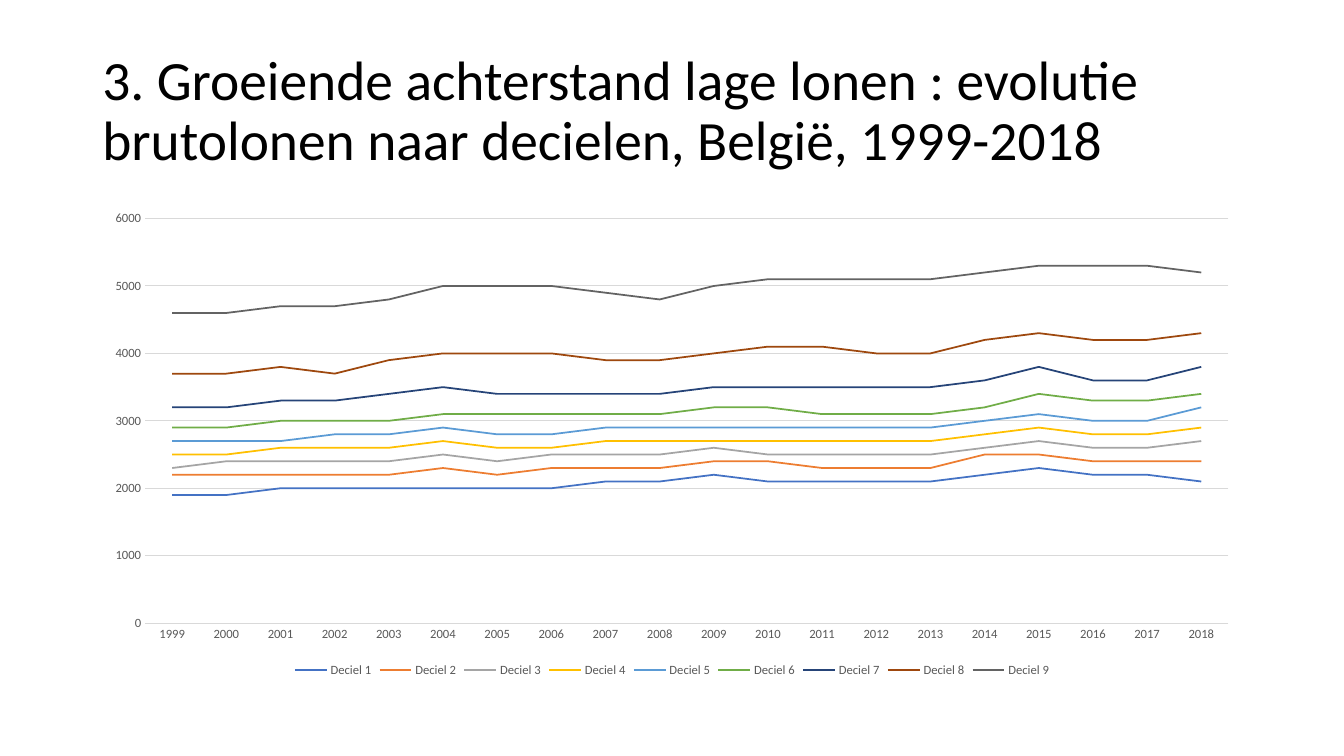
from pptx import Presentation
from pptx.chart.data import CategoryChartData
from pptx.dml.color import RGBColor
from pptx.enum.chart import XL_CHART_TYPE, XL_LEGEND_POSITION, XL_TICK_MARK
from pptx.enum.text import MSO_ANCHOR
from pptx.util import Pt

PX = 9525
FACE = "Calibri"
BLACK = RGBColor(0x00, 0x00, 0x00)
GREY = RGBColor(0x59, 0x59, 0x59)
RULE = RGBColor(0xD9, 0xD9, 0xD9)
BLUE = RGBColor(0x44, 0x72, 0xC4)
ORANGE = RGBColor(0xED, 0x7D, 0x31)
SILVER = RGBColor(0xA5, 0xA5, 0xA5)
GOLD = RGBColor(0xFF, 0xC0, 0x00)
SKY = RGBColor(0x5B, 0x9B, 0xD5)
GREEN = RGBColor(0x70, 0xAD, 0x47)
NAVY = RGBColor(0x26, 0x44, 0x78)
BROWN = RGBColor(0x9E, 0x48, 0x0E)
SLATE = RGBColor(0x63, 0x63, 0x63)

TITLE = ("3. Groeiende achterstand lage lonen : evolutie brutolonen "
         "naar decielen, België, 1999-2018")
YEARS = range(1999, 2019)
# Gross wages in hundreds, one row per decile, one value per year
WAGES = [
    (BLUE, [19, 19, 20, 20, 20, 20, 20, 20, 21, 21,
            22, 21, 21, 21, 21, 22, 23, 22, 22, 21]),
    (ORANGE, [22, 22, 22, 22, 22, 23, 22, 23, 23, 23,
              24, 24, 23, 23, 23, 25, 25, 24, 24, 24]),
    (SILVER, [23, 24, 24, 24, 24, 25, 24, 25, 25, 25,
              26, 25, 25, 25, 25, 26, 27, 26, 26, 27]),
    (GOLD, [25, 25, 26, 26, 26, 27, 26, 26, 27, 27,
            27, 27, 27, 27, 27, 28, 29, 28, 28, 29]),
    (SKY, [27, 27, 27, 28, 28, 29, 28, 28, 29, 29,
           29, 29, 29, 29, 29, 30, 31, 30, 30, 32]),
    (GREEN, [29, 29, 30, 30, 30, 31, 31, 31, 31, 31,
             32, 32, 31, 31, 31, 32, 34, 33, 33, 34]),
    (NAVY, [32, 32, 33, 33, 34, 35, 34, 34, 34, 34,
            35, 35, 35, 35, 35, 36, 38, 36, 36, 38]),
    (BROWN, [37, 37, 38, 37, 39, 40, 40, 40, 39, 39,
             40, 41, 41, 40, 40, 42, 43, 42, 42, 43]),
    (SLATE, [46, 46, 47, 47, 48, 50, 50, 50, 49, 48,
             50, 51, 51, 51, 51, 52, 53, 53, 53, 52]),
]


def assign(item, values):
    for name, value in values.items():
        setattr(item, name, value)


def style(font, size, color):
    assign(font, {"name": FACE, "size": Pt(size)})
    font.color.rgb = color


def stroke(line, color, width):
    line.color.rgb = color
    line.width = Pt(width)


def add_title(slide, box):
    frame = slide.shapes.add_textbox(*[n * PX for n in box]).text_frame
    assign(frame, {"word_wrap": True, "vertical_anchor": MSO_ANCHOR.MIDDLE})
    para = frame.paragraphs[0]
    assign(para, {"text": TITLE, "line_spacing": 0.9})
    style(para.font, 39.6, BLACK)


def add_lines(slide, box):
    """Draw the wage chart with one line per decile."""
    data = CategoryChartData()
    data.categories = [str(year) for year in YEARS]
    for rank, (_, wages) in enumerate(WAGES, 1):
        data.add_series(f"Deciel {rank}", [wage * 100 for wage in wages])
    chart = slide.shapes.add_chart(
        XL_CHART_TYPE.LINE, *[n * PX for n in box], data).chart
    assign(chart, {"has_title": False, "has_legend": True})
    style(chart.font, 10, BLACK)
    assign(chart.legend, {"position": XL_LEGEND_POSITION.BOTTOM,
                          "include_in_layout": False})
    style(chart.legend.font, 9, GREY)

    years, scale = chart.category_axis, chart.value_axis
    for axis in (years, scale):
        assign(axis, {"major_tick_mark": XL_TICK_MARK.NONE,
                      "minor_tick_mark": XL_TICK_MARK.NONE})
        style(axis.tick_labels.font, 9, GREY)
    assign(scale, {"minimum_scale": 0, "maximum_scale": 6000,
                   "major_unit": 1000, "has_major_gridlines": True})
    stroke(years.format.line, RULE, 0.75)
    stroke(scale.major_gridlines.format.line, RULE, 0.75)
    scale.format.line.fill.background()

    plot = chart.plots[0]
    plot.vary_by_categories = False
    for series, (color, _) in zip(plot.series, WAGES):
        series.smooth = False
        stroke(series.format.line, color, 1.25)


def main():
    deck = Presentation()
    assign(deck, {"slide_width": 1280 * PX, "slide_height": 720 * PX})
    slide = deck.slides.add_slide(deck.slide_layouts[6])
    add_title(slide, (88, 38, 1104, 139))
    add_lines(slide, (88, 192, 1104, 457))
    deck.save("out.pptx")


if __name__ == "__main__":
    main()
